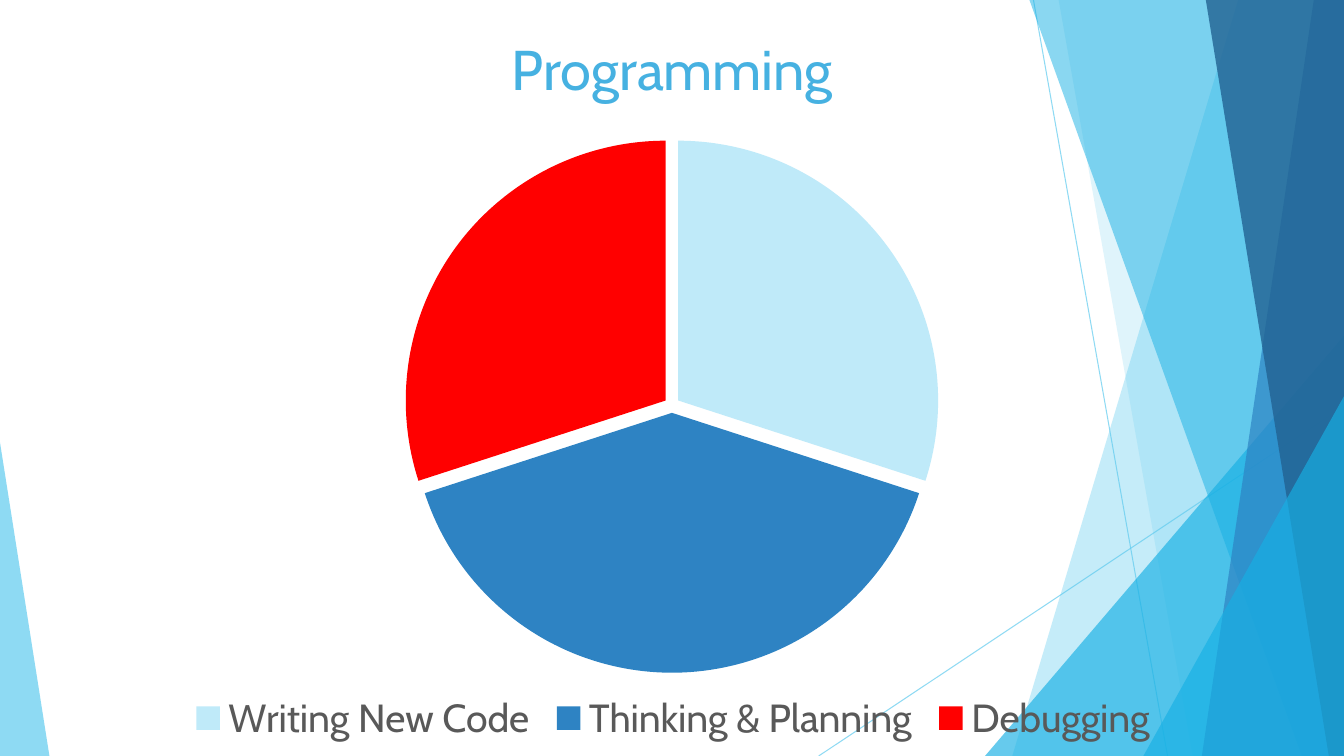
from lxml import etree
from pptx import Presentation
from pptx import util as u
from pptx.chart.data import CategoryChartData
from pptx.dml.color import RGBColor
from pptx.enum import chart as ch, shapes
from pptx.oxml import ns

W, H = 13.33, 7.5
FONT = "Cabin"
TITLE = "Programming"
COLORS = {"sky": "5FCBEF", "cyan": "17B0E4", "blue": "2E83C3", "navy": "226292",
          "pale": "BFEAF9", "red": "FF0000", "title": "46B1E1", "legend": "595959"}
SLICES = [("Writing New Code", 30, "pale"),
          ("Thinking & Planning", 40, "blue"),
          ("Debugging", 30, "red")]
RAYS = [((10.25, 0), (11.58, H)), ((W, 4.03), (8.12, H))]
FACETS = [("band", 12.28, 10.04, "sky", 36),
          ("band", 10.5, 11.83, "sky", 20),
          ("triangle", 9.77, W, 3.33, 1, "cyan", 66),
          ("band", 10.21, 12.91, "cyan", 50),
          ("band", 13.03, 11.92, "blue", 70),
          ("band", 11.96, 13.18, "navy", 80),
          ("triangle", 11.34, W, 3.93, 1, "cyan", 66),
          ("triangle", 0, 0.49, 4.39, 0, "sky", 70)]
CHART_BOX = (1.26, 0, 10.81, H)
TITLE_AT = (3.71, 0.2)
PIE_AT = (2.75, 1.36, 5.31, 5.32)
LEGEND_AT = (0.54, 6.85, 9.75, 0.55)


def rgb(name):
    return RGBColor.from_string(COLORS[name])


def set_alpha(fill_parent, percent):
    color = fill_parent.find(".//" + ns.qn("a:srgbClr"))
    etree.SubElement(color, ns.qn("a:alpha")).set("val", str(percent * 1000))


def paint(s, color, alpha):
    s.shadow.inherit = False
    s.fill.solid()
    s.fill.fore_color.rgb = rgb(color)
    s.line.fill.background()
    set_alpha(s._element.spPr, alpha)


def add_ray(sp, start, end):
    s = sp.add_connector(shapes.MSO_CONNECTOR.STRAIGHT,
                         *(u.Inches(v) for v in start + end))
    s.line.color.rgb = rgb("sky")
    s.line.width = u.Pt(0.75)
    set_alpha(s._element.spPr, 70)
    etree.SubElement(s._element.spPr, ns.qn("a:effectLst"))


def add_band(sp, top, bottom, color, alpha):
    outline = sp.build_freeform(u.Inches(top), 0)
    outline.add_line_segments([(u.Inches(x), u.Inches(y))
                               for x, y in ((W, 0), (W, H), (bottom, H))])
    paint(outline.convert_to_shape(), color, alpha)


def add_triangle(sp, left, right, top, apex, color, alpha):
    s = sp.add_shape(shapes.MSO_SHAPE.ISOSCELES_TRIANGLE,
                     *(u.Inches(v) for v in (left, top, right - left, H - top)))
    s.adjustments[0] = apex
    paint(s, color, alpha)


def place(element, box, index, inner=False):
    for old in element.findall(ns.qn("c:layout")):
        element.remove(old)
    layout = etree.Element(ns.qn("c:layout"))
    manual = etree.SubElement(layout, ns.qn("c:manualLayout"))
    settings = [("layoutTarget", "inner")] if inner else []
    settings += [("xMode", "edge"), ("yMode", "edge")]
    settings += [(tag, length / CHART_BOX[2 + i % 2])
                 for i, (tag, length) in enumerate(zip("xywh", box))]
    for tag, value in settings:
        etree.SubElement(manual, ns.qn("c:" + tag)).set("val", str(value))
    element.insert(index, layout)


def style(font, size, color):
    font.name = FONT
    font.size = u.Pt(size)
    font.bold = False
    font.color.rgb = rgb(color)


def add_pie(sp):
    data = CategoryChartData()
    data.categories = [name for name, _, _ in SLICES]
    data.add_series("Series 1", [value for _, value, _ in SLICES])
    chart = sp.add_chart(ch.XL_CHART_TYPE.PIE,
                         *(u.Inches(v) for v in CHART_BOX), data).chart
    chart.font.name = FONT
    chart.font.size = u.Pt(10)
    chart.has_title = True
    tf = chart.chart_title.text_frame
    tf.text = TITLE
    style(tf.paragraphs[0].font, 40, "title")
    chart.has_legend = True
    chart.legend.position = ch.XL_LEGEND_POSITION.BOTTOM
    chart.legend.include_in_layout = False
    style(chart.legend.font, 28, "legend")
    plot = chart.plots[0]
    plot.vary_by_categories = True
    series = plot.series[0]
    for i, (_, _, color) in enumerate(SLICES):
        fmt = series.points[i].format
        fmt.fill.solid()
        fmt.fill.fore_color.rgb = rgb(color)
        fmt.line.fill.background()
    explosion = etree.Element(ns.qn("c:explosion"), val="3")
    series._element.find(ns.qn("c:dPt")).addprevious(explosion)
    place(chart.chart_title._element, TITLE_AT, 1)
    place(chart.legend._element, LEGEND_AT, 1)
    place(chart._chartSpace.find(".//" + ns.qn("c:plotArea")), PIE_AT, 0, inner=True)


def main():
    prs = Presentation()
    prs.slide_width, prs.slide_height = u.Inches(W), u.Inches(H)
    sp = prs.slides.add_slide(prs.slide_layouts[6]).shapes
    for start, end in RAYS:
        add_ray(sp, start, end)
    draw = {"band": add_band, "triangle": add_triangle}
    for kind, *facet in FACETS:
        draw[kind](sp, *facet)
    add_pie(sp)
    prs.save("out.pptx")


if __name__ == "__main__":
    main()
